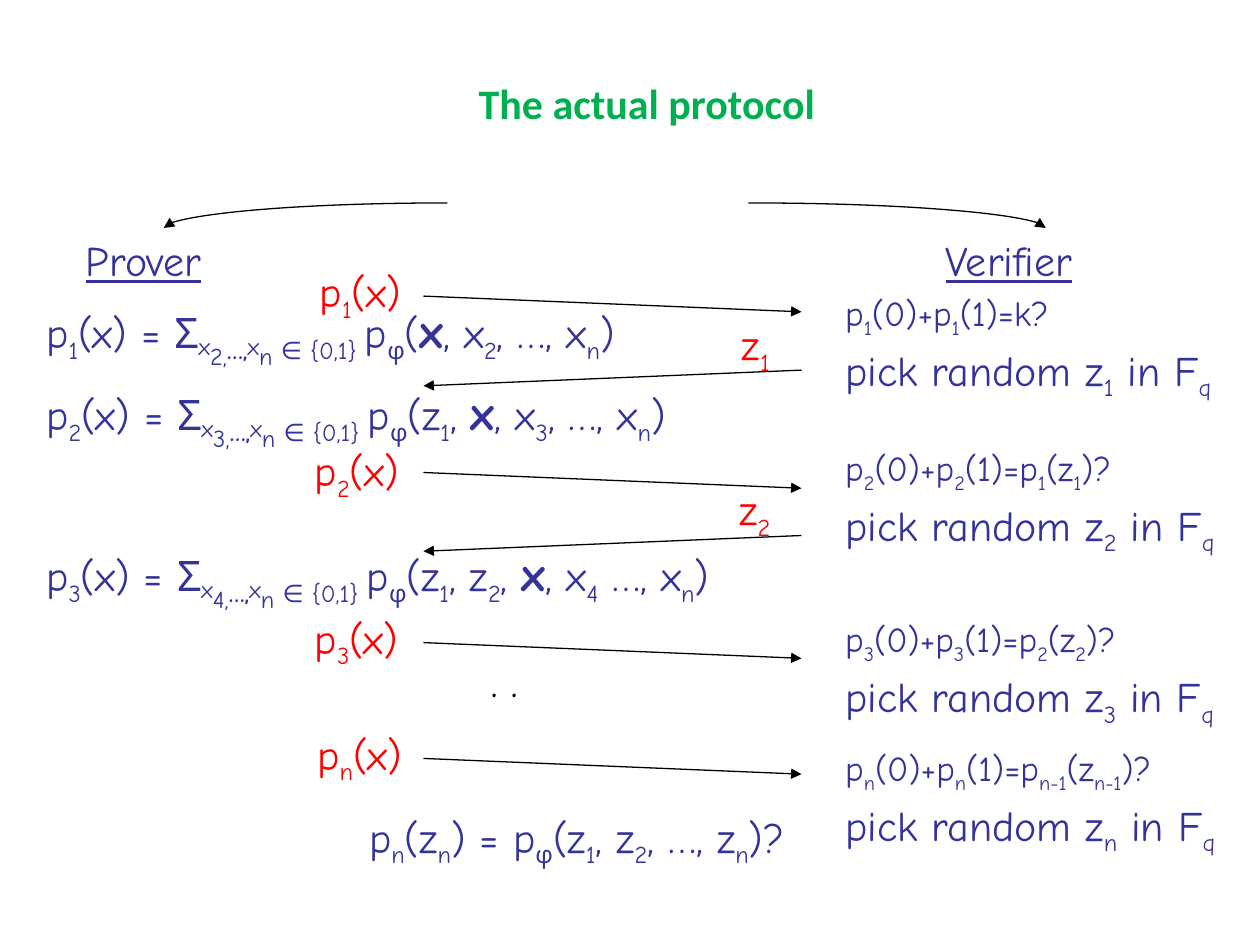
"""Build the slide of the interactive protocol between prover and verifier."""
from lxml import etree
from pptx import Presentation
from pptx.dml.color import RGBColor
from pptx.enum import shapes
from pptx.oxml import ns
from pptx.util import Pt

BLUE, RED, BLACK, GREEN = "333399", "FF0000", "000000", "00B050"
BASELINES = {"_": -25, "^": -15, "~": -40, "!": -25}

prs = Presentation()
prs.slide_width, prs.slide_height = Pt(720), Pt(540)
s = prs.slides.add_slide(prs.slide_layouts[6])


def add_text(x, y, w, h, lines, color=BLUE, font="Comic Neue", spacing=None):
    """Add (size, markup) lines; | splits runs, a first sign _ ^ ~ ! * styles one."""
    tf = s.shapes.add_textbox(Pt(x), Pt(y), Pt(w), Pt(h)).text_frame
    tf.word_wrap = True
    for i, (size, markup) in enumerate(lines):
        p = tf.add_paragraph() if i else tf.paragraphs[0]
        p.font.size, p.font.name = Pt(size), font
        p.font.color.rgb = RGBColor.from_string(color)
        if spacing:
            p.line_spacing = spacing
        if i:
            p.space_before = Pt(size / 2)
        for part in markup.split("|"):
            sign = part[0]
            r = p.add_run()
            r.text = part[1:] if sign in "_^~!*" else part
            if sign in BASELINES:
                r.font._element.set("baseline", str(BASELINES[sign] * 1000))
            if sign in "!*":
                r.font.bold = True
            if sign == "*":
                r.font.size = Pt(28)
    return tf.paragraphs[0]


def add_arrow(x1, y1, x2, y2, kind=shapes.MSO_CONNECTOR.STRAIGHT):
    """Add a thin black arrow that points at its second end."""
    sp = s.shapes.add_connector(kind, Pt(x1), Pt(y1), Pt(x2), Pt(y2))
    sp.line.width = Pt(0.75)
    sp.line.color.rgb = RGBColor.from_string(BLACK)
    etree.SubElement(sp.line._get_or_add_ln(), ns.qn("a:tailEnd"), type="triangle")
    etree.SubElement(sp._element.spPr, ns.qn("a:effectLst"))
    return sp


title = add_text(266.4, 41, 212, 36, [(24, "The actual protocol")], GREEN, "Calibri")
title.font.bold = True

for x, w, role in [(41.8, 104, "Prover"), (533.5, 128, "Verifier")]:
    add_text(x, 130.3, w, 36, [(24, role)]).font.underline = True

for x1, x2 in [(255.6, 93.6), (427.7, 597.6)]:
    sp = add_arrow(x1, 116, x2, 130.3, shapes.MSO_CONNECTOR.CURVE)
    sp._element.spPr.find(ns.qn("a:prstGeom")).set("prst", "curvedConnector2")

LEFT, RIGHT, DROP = 242, 458, 9
rounds = [
    ("1", 169.2, 175.7, 148.3, 167.8, "k?"),
    ("2", 270, 172.8, 250.6, 256.3, "p|_1|(z|_1|)?"),
    ("3", 367.2, 172.8, 346.3, 354.2, "p|_2|(z|_2|)?"),
    ("n", 433.4, 174.2, 412.6, 427.7, "p|_n-1|(z|_n-1|)?"),
]
for n, arrow_y, label_x, label_y, check_y, value in rounds:
    add_arrow(LEFT, arrow_y, RIGHT, arrow_y + DROP)
    add_text(label_x, label_y, 68, 36, [(24, f"p|_{n}|(x)")], RED)
    check = f"p|_{n}|(0)+p|_{n}|(1)={value}"
    pick = f"pick random z|_{n}| in F|_q"
    add_text(475.9, check_y, 248, 58, [(20, check), (24, pick)], spacing=0.7)

for n, arrow_y, x, y in [(1, 211.5, 416.9, 178.6), (2, 306, 415.4, 272.9)]:
    add_arrow(RIGHT, arrow_y, LEFT, arrow_y + DROP)
    add_text(x, y, 37, 36, [(24, f"z|_{n}")], RED)

sums = [
    (167.8, "(|*x|, x|_2|, …, x"),
    (214.6, "(z|_1|, |*x|, x|_3|, …, x"),
    (306.7, "(z|_1|, z|_2|, |*x|, x|_4| …, x"),
]
for n, (y, arguments) in enumerate(sums, 1):
    total = f"p|_{n}|(x) = Σ|^x|~{n + 1},|!…,|^x|~n |_∈ {{0,1}} "
    add_text(19.4, y, 462, 41, [(24, f"{total}|p|_φ|{arguments}|_n|)")])

add_text(273.6, 370.8, 32, 65, [(24, ". .")], BLACK)
final = "p|_n|(z|_n|) = p|_φ|(z|_1|, z|_2|, …, z|_n|)?"
add_text(203.8, 465.8, 284, 31, [(24, final)], spacing=0.7)

prs.save("out.pptx")
